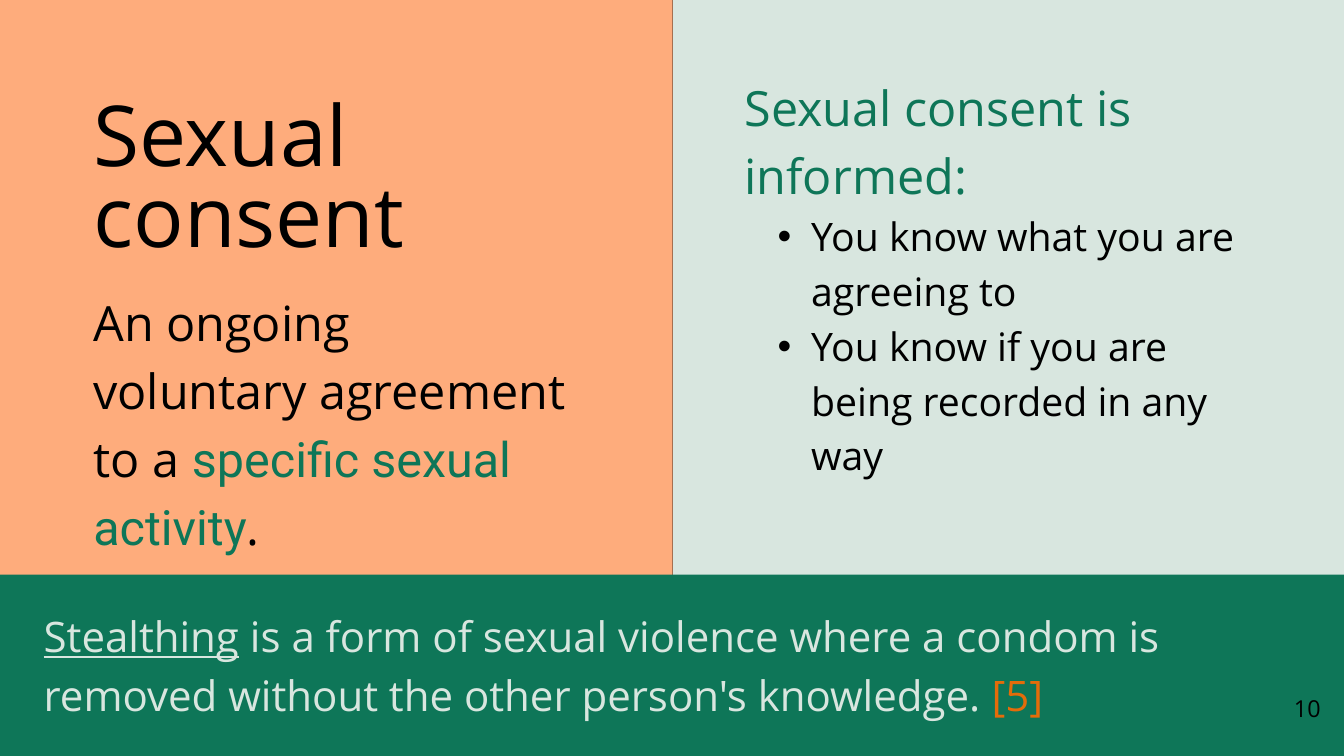
"""Build the slide on informed sexual consent."""
from dataclasses import dataclass
from typing import NamedTuple, Optional

from lxml import etree
from pptx import Presentation
from pptx.dml.color import RGBColor
from pptx.enum import shapes, text
from pptx.oxml import ns
from pptx.util import Pt


@dataclass(frozen=True)
class Theme:
    """Colours, fonts and type sizes of the slide."""
    mint: str = "D8E6DF"
    peach: str = "FEAC7C"
    green: str = "0E7658"
    orange: str = "E46C0A"
    black: str = "000000"
    body_font: str = "Open Sans"
    accent_font: str = "Roboto"
    title: float = 90
    lead: float = 52
    note: float = 45
    item: float = 42
    number: float = 25


THEME = Theme()


class Frame(NamedTuple):
    """Left, top, width and height in points."""
    left: float
    top: float
    width: float
    height: float


@dataclass(frozen=True)
class Span:
    """A piece of text with what sets it apart in its paragraph."""
    words: str
    color: Optional[str] = None
    font: Optional[str] = None
    underline: Optional[bool] = None


@dataclass(frozen=True)
class Para:
    """A paragraph with its type size, line height and colour."""
    spans: tuple[Span, ...]
    size: float
    leading: Optional[float] = None
    color: Optional[str] = THEME.black
    font: Optional[str] = THEME.body_font
    bullet: bool = False
    align: Optional[text.PP_ALIGN] = None


@dataclass(frozen=True)
class TextBlock:
    """A text box and its paragraphs."""
    frame: Frame
    paras: tuple[Para, ...]
    inset: bool = False


class Panel(NamedTuple):
    """A plain coloured area."""
    frame: Frame
    color: str


PANELS = (
    Panel(Frame(-68.4, -32.4, 789.12, 875.52), THEME.peach),
    Panel(Frame(-21.6, 615.6, 1461.6, 243), THEME.green),
)

TITLE = TextBlock(Frame(100, 108.7, 371.5, 179.3), tuple(
    Para((Span(line),), THEME.title, 87.3) for line in ("Sexual", "consent")))

DEFINITION = TextBlock(Frame(100, 303.8, 517, 288), (
    Para((
        Span("An ongoing voluntary agreement to a ", THEME.black, THEME.body_font),
        Span("specific sexual activity", THEME.green, THEME.accent_font),
        Span(".", THEME.black, THEME.body_font),
    ), THEME.lead, 72.8, color=None, font=None),))

INFORMED = TextBlock(Frame(797.8, 73.4, 560.9, 502.6), (
    *(Para((Span(line),), THEME.lead, 72.8, THEME.green)
      for line in ("Sexual consent is", "informed:")),
    *(Para((Span(line),), THEME.item, 58.8, bullet=True)
      for line in ("You know what you are agreeing to",
                   "You know if you are being recorded in any way")),
))

STEALTHING = TextBlock(Frame(46.8, 645.1, 1342.8, 123.1), (
    Para((
        Span("Stealthing", THEME.mint, underline=True),
        Span(" is a form of sexual violence where a condom is removed "
             "without the other person's knowledge. ", THEME.mint),
        Span("[5]", THEME.orange),
    ), THEME.note, 63, color=None),))

PAGE_NUMBER = TextBlock(Frame(1211.8, 735.1, 210.2, 46.8), (
    Para((Span("10"),), THEME.number, align=text.PP_ALIGN.RIGHT),), inset=True)


def place(frame: Frame) -> tuple[Pt, ...]:
    """Turn a frame into lengths."""
    return tuple(Pt(value) for value in frame)


def style(font, color: Optional[str], name: Optional[str]) -> None:
    """Set the colour and typeface that are given."""
    if color:
        font.color.rgb = RGBColor.from_string(color)
    if name:
        font.name = name


def add_bullet(paragraph) -> None:
    """Give a paragraph a hanging round bullet."""
    paragraph.level = 1
    properties = paragraph._p.get_or_add_pPr()
    properties.set("marL", str(Pt(71.3)))
    properties.set("indent", str(Pt(-36)))
    etree.SubElement(properties, ns.qn("a:buFont")).set("typeface", "Arial")
    etree.SubElement(properties, ns.qn("a:buChar")).set("char", "•")


def write_para(paragraph, para: Para) -> None:
    """Fill one paragraph with its spans."""
    if para.leading:
        paragraph.line_spacing = Pt(para.leading)
    if para.align is not None:
        paragraph.alignment = para.align
    if para.bullet:
        add_bullet(paragraph)
    paragraph.font.size = Pt(para.size)
    style(paragraph.font, para.color, para.font)
    for span in para.spans:
        run = paragraph.add_run()
        run.text = span.words
        style(run.font, span.color, span.font)
        if span.underline:
            run.font.underline = True


def add_text(page, block: TextBlock) -> None:
    """Draw a text box."""
    frame = page.shapes.add_textbox(*place(block.frame)).text_frame
    frame.word_wrap = True
    if block.inset:
        frame.vertical_anchor = text.MSO_ANCHOR.MIDDLE
    else:
        frame.auto_size = text.MSO_AUTO_SIZE.SHAPE_TO_FIT_TEXT
        frame.margin_left = frame.margin_right = Pt(0)
        frame.margin_top = frame.margin_bottom = Pt(0)
    for index, para in enumerate(block.paras):
        write_para(frame.add_paragraph() if index else frame.paragraphs[0], para)


def add_panel(page, panel: Panel) -> None:
    """Draw a flat rectangle."""
    box = page.shapes.add_shape(shapes.MSO_SHAPE.RECTANGLE, *place(panel.frame))
    box.shadow.inherit = False
    box.fill.solid()
    box.fill.fore_color.rgb = RGBColor.from_string(panel.color)
    box.line.fill.background()


def add_divider(page, x: float, top: float, bottom: float) -> None:
    """Draw the thin upright line between the halves."""
    line = page.shapes.add_connector(
        shapes.MSO_CONNECTOR.STRAIGHT, Pt(x), Pt(top), Pt(x), Pt(bottom))
    line.line.width = Pt(0.75)
    line.line.color.rgb = RGBColor.from_string(THEME.black)
    etree.SubElement(line._element.spPr, ns.qn("a:effectLst"))


def main() -> None:
    """Build and save the deck."""
    deck = Presentation()
    deck.slide_width, deck.slide_height = Pt(1440), Pt(810)
    page = deck.slides.add_slide(deck.slide_layouts[6])
    page.background.fill.solid()
    page.background.fill.fore_color.rgb = RGBColor.from_string(THEME.mint)
    add_divider(page, 720.72, -227.5, 1050.5)
    for panel in PANELS:
        add_panel(page, panel)
    for block in (TITLE, DEFINITION, INFORMED, STEALTHING, PAGE_NUMBER):
        add_text(page, block)
    deck.save("out.pptx")


if __name__ == "__main__":
    main()
